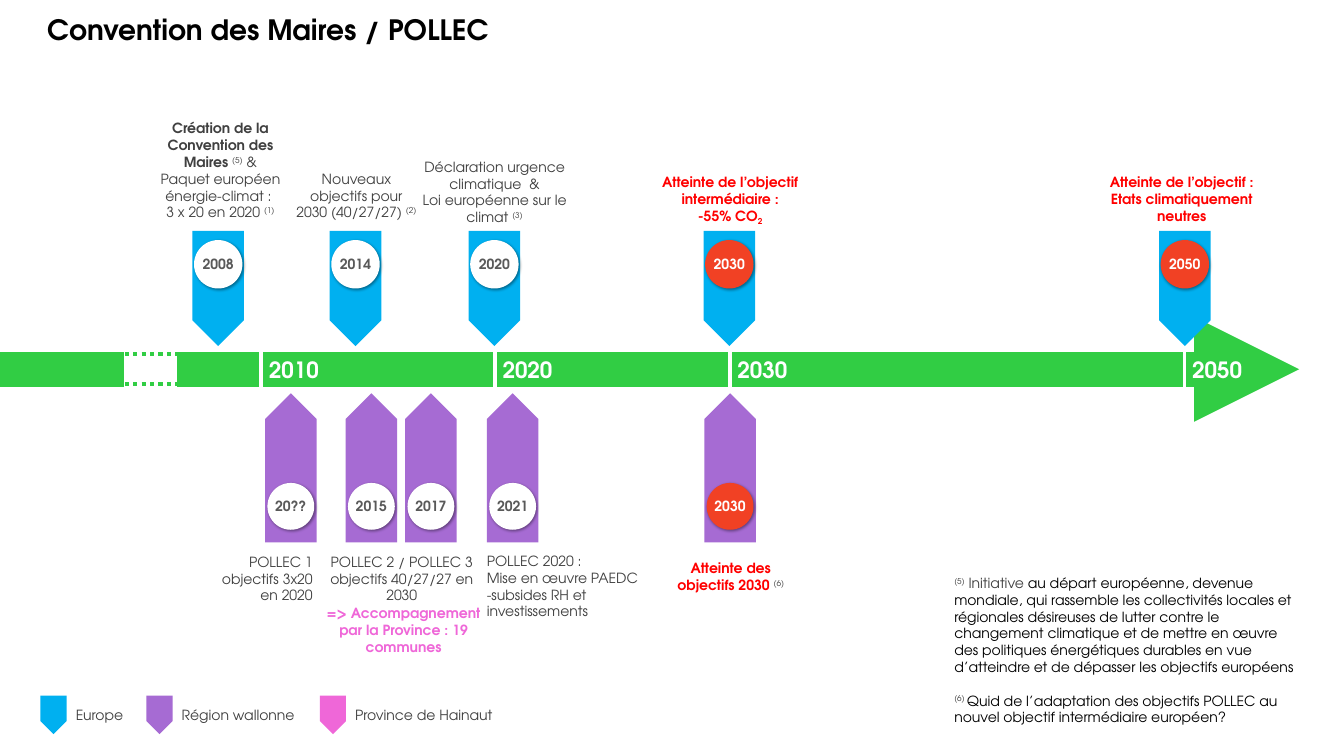
from dataclasses import dataclass
from lxml.etree import SubElement
from pptx import Presentation
from pptx.dml.color import RGBColor
from pptx.enum.dml import MSO_LINE
from pptx.enum.shapes import MSO_CONNECTOR, MSO_SHAPE
from pptx.enum.text import MSO_ANCHOR, PP_ALIGN
from pptx.oxml.ns import qn
from pptx.util import Cm, Pt


@dataclass(frozen=True)
class Theme:
    """Colours, font and type sizes of the slide."""
    font: str = "TeX Gyre Adventor"
    black: str = "000000"
    white: str = "FFFFFF"
    dark: str = "404040"
    grey: str = "595959"
    red: str = "FF0000"
    goal: str = "F14124"
    blue: str = "00B0F0"
    violet: str = "A66BD3"
    pink: str = "EF67D8"
    green: str = "31CD44"
    title: int = 20
    year: int = 16
    body: int = 10


@dataclass(frozen=True)
class Box:
    """A region in centimetres."""
    x: float
    y: float
    w: float
    h: float

    def inner(self, x, y, w, h):
        """Return a box placed relative to this one."""
        return Box(self.x + x, self.y + y, w, h)

    def lengths(self):
        """Return left, top, width and height."""
        return Cm(self.x), Cm(self.y), Cm(self.w), Cm(self.h)


T = Theme()
LEFT, MID, RIGHT = PP_ALIGN.LEFT, PP_ALIGN.CENTER, PP_ALIGN.RIGHT


def mark(num):
    """Return a raised reference number."""
    return f"({num})", dict(base=30000, tint=T.dark, bold=False)


def write(frame, paras, align=LEFT, tint=T.dark, bold=False, size=T.body, inset=0, gap=0):
    """Fill a text frame; a paragraph is a string or a list of (text, style) runs."""
    frame.word_wrap = True
    if inset == 0:
        frame.margin_left = frame.margin_right = 0
        frame.margin_top = frame.margin_bottom = 0
    for i, runs in enumerate(paras):
        para = frame.add_paragraph() if i else frame.paragraphs[0]
        para.alignment = align
        if i and gap:
            para.space_before = Pt(gap)
        font = para.font
        font.name, font.size, font.bold = T.font, Pt(size), bold
        font.color.rgb = RGBColor.from_string(tint)
        for text, style in [(runs, {})] if isinstance(runs, str) else runs:
            run = para.add_run()
            run.text = text
            if "bold" in style:
                run.font.bold = style["bold"]
            if "tint" in style:
                run.font.color.rgb = RGBColor.from_string(style["tint"])
            if "base" in style:
                run._r.get_or_add_rPr().set("baseline", str(style["base"]))


def label(slide, box, paras, **style):
    """Add a text box."""
    write(slide.shapes.add_textbox(*box.lengths()).text_frame, paras, **style)


def solid(slide, kind, box, fill):
    """Add a plain filled shape."""
    shape = slide.shapes.add_shape(kind, *box.lengths())
    shape.shadow.inherit = False
    shape.fill.solid()
    shape.fill.fore_color.rgb = RGBColor.from_string(fill)
    shape.line.fill.background()
    return shape


def arrow(slide, box, fill, turn=0):
    """Add a full-width pointed block."""
    shape = solid(slide, MSO_SHAPE.DOWN_ARROW, box, fill)
    shape.adjustments[0], shape.adjustments[1] = 1, 0.5
    shape.rotation = turn


def badge(slide, box, year, goal):
    """Add a shadowed circle holding a year."""
    disc = solid(slide, MSO_SHAPE.OVAL, box, T.goal if goal else T.white)
    glow = SubElement(disc._element.spPr.find(qn("a:effectLst")), qn("a:outerShdw"),
                      blurRad="25400", dist="12700", dir="2700000", algn="tl", rotWithShape="0")
    tone = SubElement(glow, qn("a:srgbClr"), val=T.black)
    SubElement(tone, qn("a:alpha"), val="40000")
    frame = disc.text_frame
    write(frame, [year], align=MID, tint=T.white if goal else T.grey, bold=True)
    frame.vertical_anchor = MSO_ANCHOR.MIDDLE


def line(slide, x1, y1, x2, y2, tint, width):
    """Add a straight line without shadow."""
    rule = slide.shapes.add_connector(MSO_CONNECTOR.STRAIGHT, Cm(x1), Cm(y1), Cm(x2), Cm(y2))
    rule.line.color.rgb = RGBColor.from_string(tint)
    rule.line.width = Pt(width)
    SubElement(rule._element.spPr, qn("a:effectLst"))
    return rule


def heading(slide, box, text):
    """Place the title."""
    title = slide.shapes.title
    title.left, title.top, title.width, title.height = box.lengths()
    frame = title.text_frame
    write(frame, [text], tint=T.black, bold=True, size=T.title)
    frame.vertical_anchor = MSO_ANCHOR.TOP
    frame.paragraphs[0].line_spacing = 0.9


def axis(slide, box):
    """Draw the green time axis with its break and decades."""
    mid = box.y + box.h / 2
    main = line(slide, box.x + 4.45, mid, box.x + box.w, mid, T.green, 25)
    SubElement(main._element.spPr.find(qn("a:ln")), qn("a:tailEnd"), type="triangle")
    for year, x in (("2010", 6.58), ("2020", 12.47), ("2030", 18.39), ("2050", 29.85)):
        line(slide, box.x + x, box.y, box.x + x, box.y + box.h, T.white, 2.75)
        label(slide, box.inner(x + 0.04, 0.11, 1.57, 0.66), [year],
              align=MID, tint=T.white, bold=True, size=T.year)
    line(slide, box.x, mid, box.x + 3.12, mid, T.green, 25)
    for shift in (-0.38, 0.38):
        dots = line(slide, box.x + 2.51, mid + shift, box.x + 4.5, mid + shift, T.green, 3)
        dots.line.dash_style = MSO_LINE.ROUND_DOT


def row(slide, box, steps, fill, turn, drop, disc):
    """Draw a row of dated blocks."""
    for year, x, goal in steps:
        arrow(slide, box.inner(x, 0, 1.3, box.h), fill, turn)
        badge(slide, box.inner(x + (1.3 - disc) / 2, drop, disc, disc), year, goal)


def europe(slide, box):
    """Draw the European steps above the axis."""
    row(slide, box.inner(0, 2.8, box.w, 2.9),
        (("2008", 4.85, False), ("2014", 8.31, False), ("2020", 11.81, False),
         ("2030", 17.73, True), ("2050", 29.21, True)), T.blue, 0, 0.23, 1.22)
    label(slide, box.inner(3.94, 0, 3.23, 2.57),
          [[("Création de la Convention des Maires ", dict(bold=True)), mark(5), (" &", {})],
           "Paquet européen énergie-climat : ", [("3 x 20 en 2020 ", {}), mark(1)]], align=MID)
    label(slide, box.inner(7.39, 1.27, 3.18, 1.27),
          [[("Nouveaux objectifs pour 2030 (40/27/27) ", {}), mark(2)]], align=MID)
    label(slide, box.inner(10.41, 0.97, 4.11, 1.7),
          ["Déclaration urgence climatique  &",
           [("Loi européenne sur le climat ", {}), mark(3)]], align=MID)
    for x, paras in ((16.56, ["Atteinte de l’objectif intermédiaire :",
                              [("-55% CO", {}), ("2", dict(base=-25000))]]),
                     (27.94, ["Atteinte de l’objectif :", "Etats climatiquement neutres"])):
        label(slide, box.inner(x, 1.35, 3.68, 1.27), paras, align=MID, tint=T.red, bold=True)


def region(slide, box):
    """Draw the Walloon steps below the axis."""
    row(slide, box.inner(0, 0, box.w, 3.76),
        (("20??", 6.68, False), ("2015", 8.71, False), ("2017", 10.21, False),
         ("2021", 12.27, False), ("2030", 17.75, True)), T.violet, 180, 2.26, 1.18)
    label(slide, box.inner(5.21, 4.03, 2.67, 1.27),
          ["POLLEC 1", "objectifs 3x20 en 2020"], align=RIGHT)
    label(slide, box.inner(8.31, 4.03, 3.63, 1.27),
          ["POLLEC 2 / POLLEC 3", "objectifs 40/27/27 en 2030"], align=MID)
    label(slide, box.inner(8.15, 5.33, 4.04, 1.27),
          ["=> Accompagnement par la Province : 19 communes"], align=MID, tint=T.pink, bold=True)
    label(slide, box.inner(12.27, 4.01, 4.42, 2.01),
          ["POLLEC 2020 :", "Mise en œuvre PAEDC -subsides RH et investissements"])
    label(slide, box.inner(16.69, 4.19, 3.45, 0.86),
          [[("Atteinte des objectifs 2030 ", {}), mark(6)]], align=MID, tint=T.red, bold=True)


def legend(slide, box):
    """Draw the colour key."""
    for x, name, fill in ((0, "Europe", T.blue), (2.67, "Région wallonne", T.violet),
                          (7.04, "Province de Hainaut", T.pink)):
        arrow(slide, box.inner(x, 0, 0.66, box.h), fill)
        label(slide, box.inner(x + 0.89, 0.28, 3.58, 0.43), [name])


def notes(slide, box):
    """Write the two footnotes."""
    label(slide, box,
          [[mark(5), (" Initiative ", dict(tint=T.dark)),
            ("au départ européenne, devenue mondiale, qui rassemble les collectivités locales et "
             "régionales désireuses de lutter contre le changement climatique et de mettre en œuvre "
             "des politiques énergétiques durables en vue d’atteindre et de dépasser les objectifs "
             "européens", {})],
           [mark(6), (" ", dict(base=30000)),
            ("Quid de l’adaptation des objectifs POLLEC au nouvel objectif intermédiaire "
             "européen?", {})]], tint=T.black, inset=1, gap=12)


def main():
    """Build and save the slide."""
    deck = Presentation()
    deck.slide_width, deck.slide_height = Cm(33.87), Cm(19.05)
    slide = deck.slides.add_slide(deck.slide_layouts[5])
    heading(slide, Box(1.19, 0.41, 31.5, 1.5), "Convention des Maires / POLLEC")
    axis(slide, Box(0, 8.86, 32.74, 0.89))
    europe(slide, Box(0, 3.02, 33.87, 5.7))
    region(slide, Box(0, 9.91, 33.87, 6.6))
    legend(slide, Box(1.02, 17.53, 11.51, 0.97))
    notes(slide, Box(23.8, 14.35, 9.19, 4.11))
    deck.save("out.pptx")


if __name__ == "__main__":
    main()
